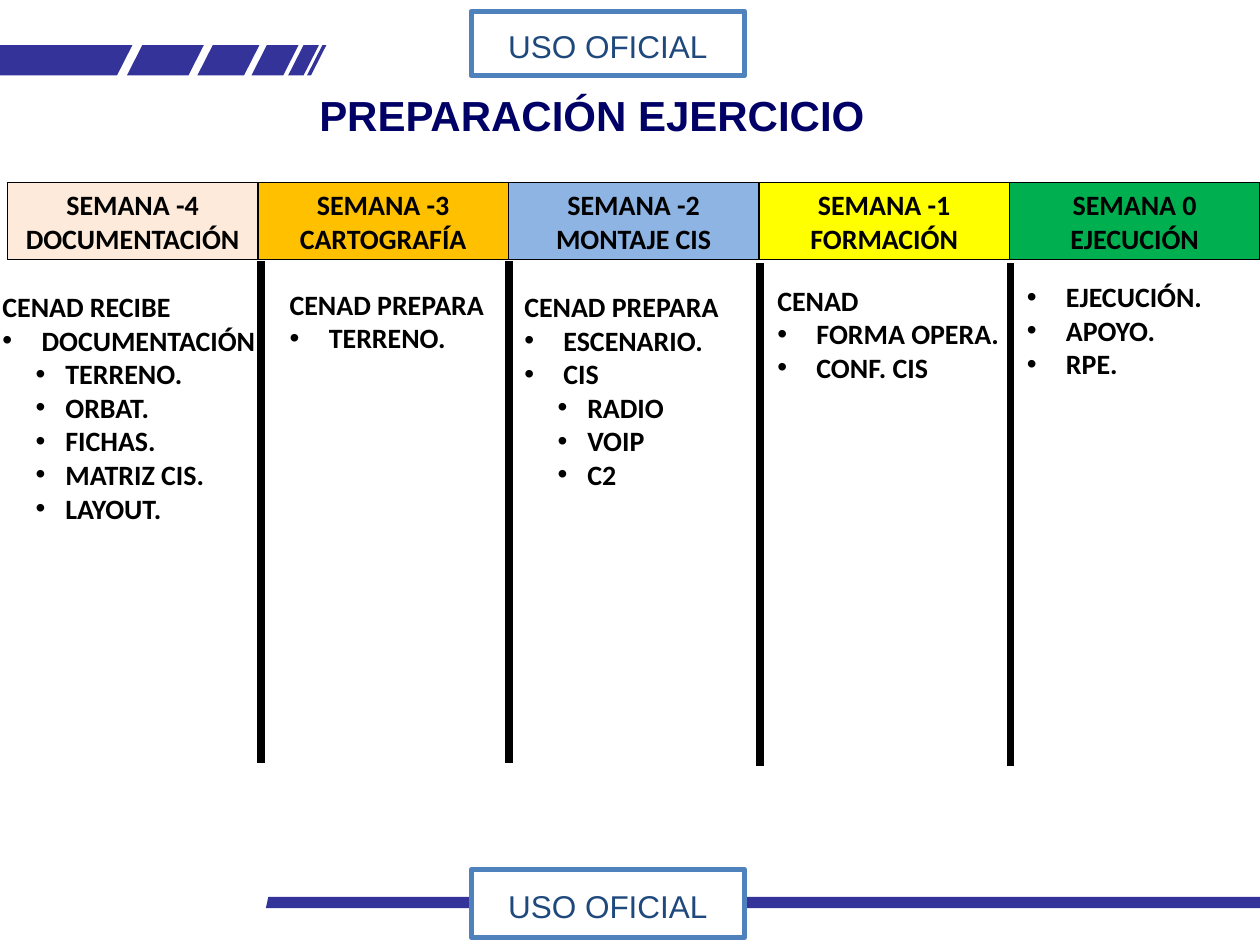
"""Build the exercise preparation slide with its five weekly columns."""
from dataclasses import dataclass

import pptx
import pptx.dml.color
import pptx.enum.shapes
import pptx.enum.text
import pptx.util
from lxml import etree
from pptx.oxml.ns import qn

Cm = pptx.util.Cm
Pt = pptx.util.Pt
ALIGN = pptx.enum.text.PP_ALIGN
ANCHOR = pptx.enum.text.MSO_ANCHOR


@dataclass(frozen=True)
class Theme:
    band: str = "333399"
    mark_line: str = "4F81BD"
    mark_text: str = "1F497D"
    title: str = "000066"
    black: str = "000000"
    white: str = "FFFFFF"
    head_font: str = "Arial"
    body_font: str = "Calibri"
    title_size: int = 24
    mark_size: int = 18
    body_size: int = 16


T = Theme()
COL_LEFT, COL_WIDTH, HEAD_TOP, HEAD_HEIGHT = 0.15, 5.05, 3.68, 1.56
BODY_INSETS = (0.18, 0.1, 0.18, 0.1)
INDENTS = {1: (0.79, -0.79), 2: (1.27, -0.6)}

WEEKS = [
    ("SEMANA -4", "DOCUMENTACIÓN", "FDEADA"),
    ("SEMANA -3", "CARTOGRAFÍA", "FFC000"),
    ("SEMANA -2", "MONTAJE CIS", "8EB4E3"),
    ("SEMANA -1", "FORMACIÓN", "FFFF00"),
    ("SEMANA 0", "EJECUCIÓN", "00B050"),
]
TASKS = [
    ((-0.13, 5.74, 5.54, 5.16), False, [
        (0, "CENAD RECIBE"), (1, "DOCUMENTACIÓN"), (2, "TERRENO."), (2, "ORBAT."),
        (2, "FICHAS."), (2, "MATRIZ CIS."), (2, "LAYOUT.")]),
    ((5.66, 5.69, 4.6, 1.57), True, [(0, "CENAD PREPARA"), (1, "TERRENO.")]),
    ((10.39, 5.74, 5.31, 4.29), True, [
        (0, "CENAD PREPARA"), (1, "ESCENARIO."), (1, "CIS"),
        (2, "RADIO"), (2, "VOIP"), (2, "C2")]),
    ((15.49, 5.61, 5.64, 2.34), True, [
        (0, "CENAD"), (1, "FORMA OPERA."), (1, "CONF. CIS")]),
    ((20.52, 5.54, 3.94, 2.26), False, [
        (1, "EJECUCIÓN."), (1, "APOYO."), (1, "RPE.")]),
]
DIVIDERS = [(5.26, 5.26), (10.26, 5.26), (15.32, 5.31), (20.37, 5.31)]
STRIPES = [(2.87, 4.11), (4.29, 5.23), (5.38, 6.02), (6.12, 6.43), (6.5, 6.58)]


def rgb(color):
    return pptx.dml.color.RGBColor.from_string(color)


def set_frame(tf, insets, anchor=ANCHOR.TOP, wrap=True):
    tf.margin_left, tf.margin_top, tf.margin_right, tf.margin_bottom = map(Cm, insets)
    tf.vertical_anchor = anchor
    tf.word_wrap = wrap


def add_bullet(p, level):
    left, indent = INDENTS[level]
    p.level = level - 1
    pPr = p._p.get_or_add_pPr()
    pPr.set("marL", str(Cm(left)))
    pPr.set("indent", str(Cm(indent)))
    color = etree.SubElement(pPr, qn("a:buClr"))
    etree.SubElement(color, qn("a:srgbClr"), val=T.black)
    etree.SubElement(pPr, qn("a:buFont"), typeface=T.head_font)
    etree.SubElement(pPr, qn("a:buChar"), char="•")


def write(tf, lines, size, font, color, bold=True, align=ALIGN.LEFT):
    for i, (level, text) in enumerate(lines):
        p = tf.add_paragraph() if i else tf.paragraphs[0]
        p.alignment = align
        if level:
            add_bullet(p, level)
        r = p.add_run()
        r.text = text
        r.font.size, r.font.name, r.font.bold = Pt(size), font, bold
        r.font.color.rgb = rgb(color)


def add_rect(s, box, fill, line, width):
    sp = s.shapes.add_shape(pptx.enum.shapes.MSO_SHAPE.RECTANGLE, *map(Cm, box))
    sp.shadow.inherit = False
    sp.fill.solid()
    sp.fill.fore_color.rgb = rgb(fill)
    sp.line.color.rgb = rgb(line)
    sp.line.width = Pt(width)
    return sp.text_frame


def add_band(s, points):
    start, *rest = [(Cm(x), Cm(y)) for x, y in points]
    builder = s.shapes.build_freeform(*start)
    builder.add_line_segments(rest, close=True)
    sp = builder.convert_to_shape()
    sp.shadow.inherit = False
    sp.fill.solid()
    sp.fill.fore_color.rgb = rgb(T.band)
    sp.line.fill.background()


def add_mark(s, top, height):
    tf = add_rect(s, (9.5, top, 5.51, height), T.white, T.mark_line, 3)
    set_frame(tf, (0.25, 0.23, 0.25, 0.13), ANCHOR.MIDDLE)
    write(tf, [(0, "USO OFICIAL")], T.mark_size, T.head_font, T.mark_text, False, ALIGN.CENTER)


def add_divider(s, x, top):
    line = s.shapes.add_connector(
        pptx.enum.shapes.MSO_CONNECTOR.STRAIGHT, Cm(x), Cm(top), Cm(x), Cm(top + 10.13))
    line.line.color.rgb = rgb(T.black)
    line.line.width = Pt(4.5)
    etree.SubElement(line._element.spPr, qn("a:effectLst"))


def add_week(s, i, week, topic, fill):
    box = (COL_LEFT + i * COL_WIDTH, HEAD_TOP, COL_WIDTH, HEAD_HEIGHT)
    tf = add_rect(s, box, fill, T.black, 0.75)
    set_frame(tf, BODY_INSETS)
    write(tf, [(0, week), (0, topic)], T.body_size, T.body_font, T.black, align=ALIGN.CENTER)


def add_tasks(s, box, wrap, lines):
    tf = s.shapes.add_textbox(*map(Cm, box)).text_frame
    set_frame(tf, BODY_INSETS, wrap=wrap)
    tf.auto_size = pptx.enum.text.MSO_AUTO_SIZE.SHAPE_TO_FIT_TEXT
    write(tf, lines, T.body_size, T.body_font, T.black)


def add_title(s):
    tf = s.shapes.add_textbox(Cm(5.88), Cm(1.68), Cm(11.8), Cm(1.27)).text_frame
    set_frame(tf, (0.25, 0.13, 0.25, 0.13), ANCHOR.MIDDLE, wrap=False)
    write(tf, [(0, "PREPARACIÓN EJERCICIO")], T.title_size, T.head_font, T.title,
          align=ALIGN.RIGHT)


def add_bands(s):
    top, bottom, slant = 0.91, 1.52, 0.31
    add_band(s, [(0, top), (2.67, top), (2.67 - slant, bottom), (0, bottom)])
    for left, right in STRIPES:
        add_band(s, [(left, top), (right, top), (right - slant, bottom), (left - slant, bottom)])
    add_band(s, [(5.41, 18.08), (25.4, 18.08), (25.4, 18.31), (5.36, 18.31)])


def main():
    prs = pptx.Presentation()
    prs.slide_width, prs.slide_height = Cm(25.4), Cm(19.05)
    s = prs.slides.add_slide(prs.slide_layouts[6])
    add_bands(s)
    add_mark(s, 17.53, 1.37)
    add_mark(s, 0.23, 1.3)
    add_title(s)
    for x, top in DIVIDERS:
        add_divider(s, x, top)
    for i, week in enumerate(WEEKS):
        add_week(s, i, *week)
    for tasks in TASKS:
        add_tasks(s, *tasks)
    prs.save("out.pptx")


if __name__ == "__main__":
    main()
